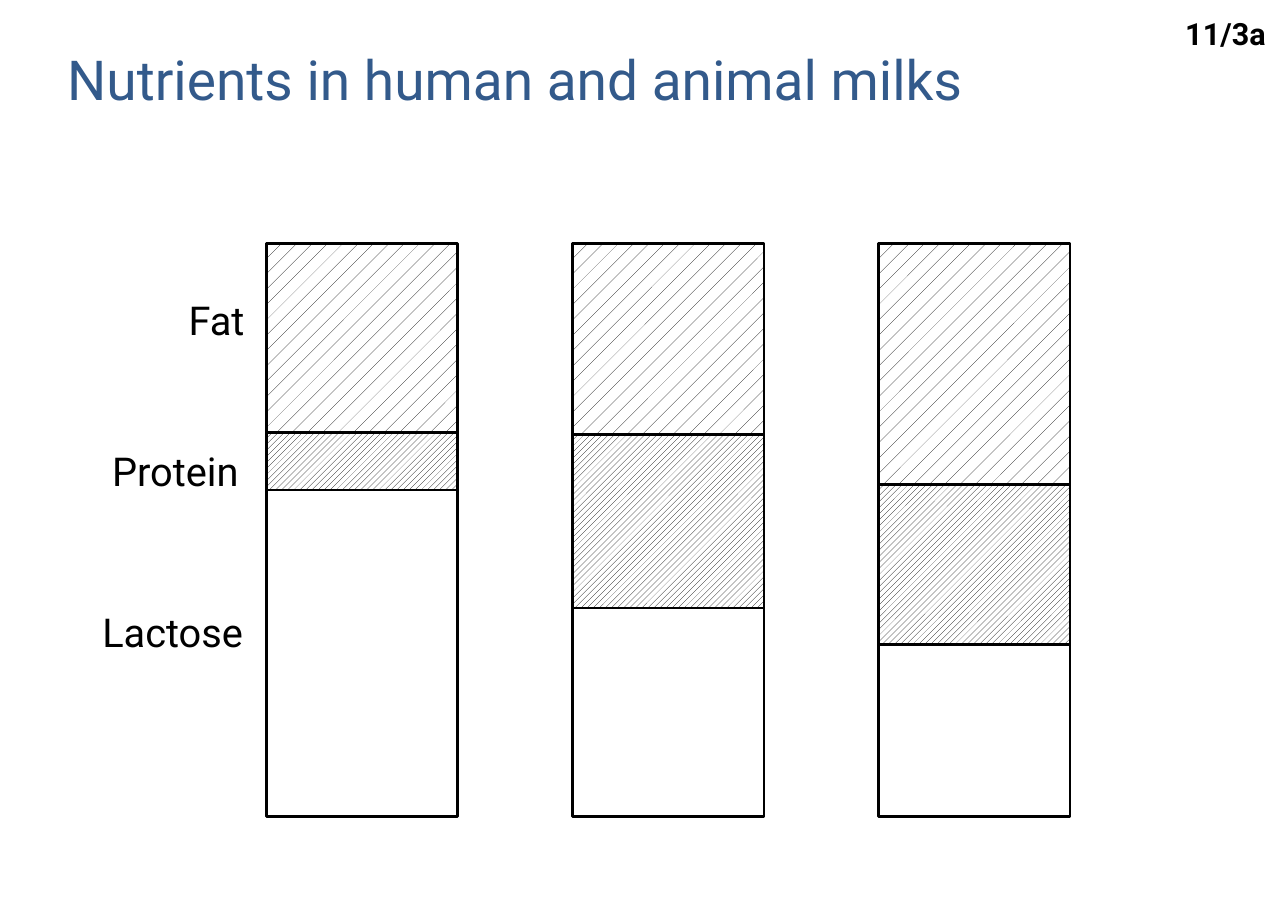
from lxml import etree
from pptx import Presentation
from pptx import util as u
from pptx.chart.data import CategoryChartData
from pptx.dml.color import RGBColor
from pptx.enum import chart as charts, dml, text
from pptx.oxml import parse_xml
from pptx.oxml.ns import nsdecls, qn

COLORS = {"title": "335A8B", "ink": "000000", "paper": "FFFFFF"}
FONT = "Roboto"
MILKS = ["1", "2", "3"]
NUTRIENTS = [
    ("Series 1", (57, 36, 30), None),
    ("Series 2", (10, 30, 28), dml.MSO_PATTERN.WIDE_UPWARD_DIAGONAL),
    ("Series 3", (33, 33, 42), dml.MSO_PATTERN.PERCENT_5),
]
LABELS = [
    ("Fat", (2.11, 6.68, 3.76, 1.35), True),
    ("Protein", (2.34, 10.16, 3.4, 1.35), False),
    ("Lactose", (1.85, 13.89, 3.99, 1.35), True),
]
PLOT_AREA = {"x": 0.012, "y": 0.022, "w": 0.952, "h": 0.942}


def color(name):
    return RGBColor.from_string(COLORS[name])


def write(frame, words, size=26, ink="ink", bold=False, align=text.PP_ALIGN.RIGHT,
          inset=(0.23, 0.13), wrap=True, fit=text.MSO_AUTO_SIZE.SHAPE_TO_FIT_TEXT):
    frame.word_wrap = wrap
    frame.auto_size = fit
    frame.vertical_anchor = text.MSO_ANCHOR.TOP
    frame.margin_left = frame.margin_right = u.Cm(inset[0])
    frame.margin_top = frame.margin_bottom = u.Cm(inset[1])
    line = frame.paragraphs[0]
    line.alignment = align
    run = line.add_run()
    run.text = words
    run.font.name, run.font.size, run.font.bold = FONT, u.Pt(size), bold
    run.font.color.rgb = color(ink)


class MilkSlide:
    """Holds the deck and the slide, with one method per kind of element."""

    def __init__(self):
        self.deck = Presentation()
        self.deck.slide_width, self.deck.slide_height = u.Cm(29.7), u.Cm(21)
        self.slide = self.deck.slides.add_slide(self.deck.slide_layouts[5])

    def title(self, words, box):
        heading = self.slide.shapes.title
        heading.left, heading.top, heading.width, heading.height = map(u.Cm, box)
        write(heading.text_frame, words, size=36, ink="title", align=text.PP_ALIGN.LEFT,
              inset=(0.28, 0.15), fit=text.MSO_AUTO_SIZE.NONE)

    def label(self, words, box, **style):
        label = self.slide.shapes.add_textbox(*map(u.Cm, box))
        write(label.text_frame, words, **style)

    def stacked_bars(self, box):
        shares = CategoryChartData()
        shares.categories = MILKS
        for name, values, _ in NUTRIENTS:
            shares.add_series(name, values)
        chart = self.slide.shapes.add_chart(
            charts.XL_CHART_TYPE.COLUMN_STACKED_100, *map(u.Cm, box), shares).chart
        chart.has_legend = chart.has_title = False
        chart.font.name, chart.font.size, chart.font.bold = "Arial", u.Pt(15), True
        chart.font.color.rgb = color("ink")
        chart.value_axis.has_major_gridlines = False
        chart.category_axis.visible = chart.value_axis.visible = False
        bars = chart.plots[0]
        bars.gap_width, bars.overlap, bars.vary_by_categories = 60, 100, False
        for nutrient, (_, _, pattern) in zip(bars.series, NUTRIENTS):
            self.fill_bar(nutrient.format, pattern)
        self.frame_plot(chart)

    def fill_bar(self, style, pattern):
        if pattern is None:
            style.fill.solid()
            style.fill.fore_color.rgb = color("paper")
        else:
            style.fill.patterned()
            style.fill.pattern = pattern
            style.fill.fore_color.rgb = color("ink")
            style.fill.back_color.rgb = color("paper")
        style.line.color.rgb = color("ink")
        style.line.width = u.Pt(1.67)

    def frame_plot(self, chart):
        body = chart.element.find(qn("c:chart"))
        body.addnext(parse_xml(f'<c:spPr {nsdecls("c", "a")}><a:noFill/>'
                               '<a:ln><a:noFill/></a:ln></c:spPr>'))
        area = body.find(qn("c:plotArea"))
        for old in area.findall(qn("c:layout")):
            area.remove(old)
        layout = parse_xml(f'<c:layout {nsdecls("c")}/>')
        manual = etree.SubElement(layout, qn("c:manualLayout"))
        settings = {"layoutTarget": "inner", "xMode": "edge", "yMode": "edge", **PLOT_AREA}
        for tag, value in settings.items():
            etree.SubElement(manual, qn(f"c:{tag}")).set("val", str(value))
        area.insert(0, layout)


def main():
    page = MilkSlide()
    page.title("Nutrients in human and animal milks", (1.27, 0.89, 26.72, 3.51))
    for words, box, wrap in LABELS:
        page.label(words, box, wrap=wrap)
    page.stacked_bars((4.55, 5.31, 22.25, 14.02))
    page.label("11/3a", (26.8, 0.2, 2.67, 1.14), size=20, bold=True, inset=(0.28, 0.15))
    page.deck.save("out.pptx")


if __name__ == "__main__":
    main()
